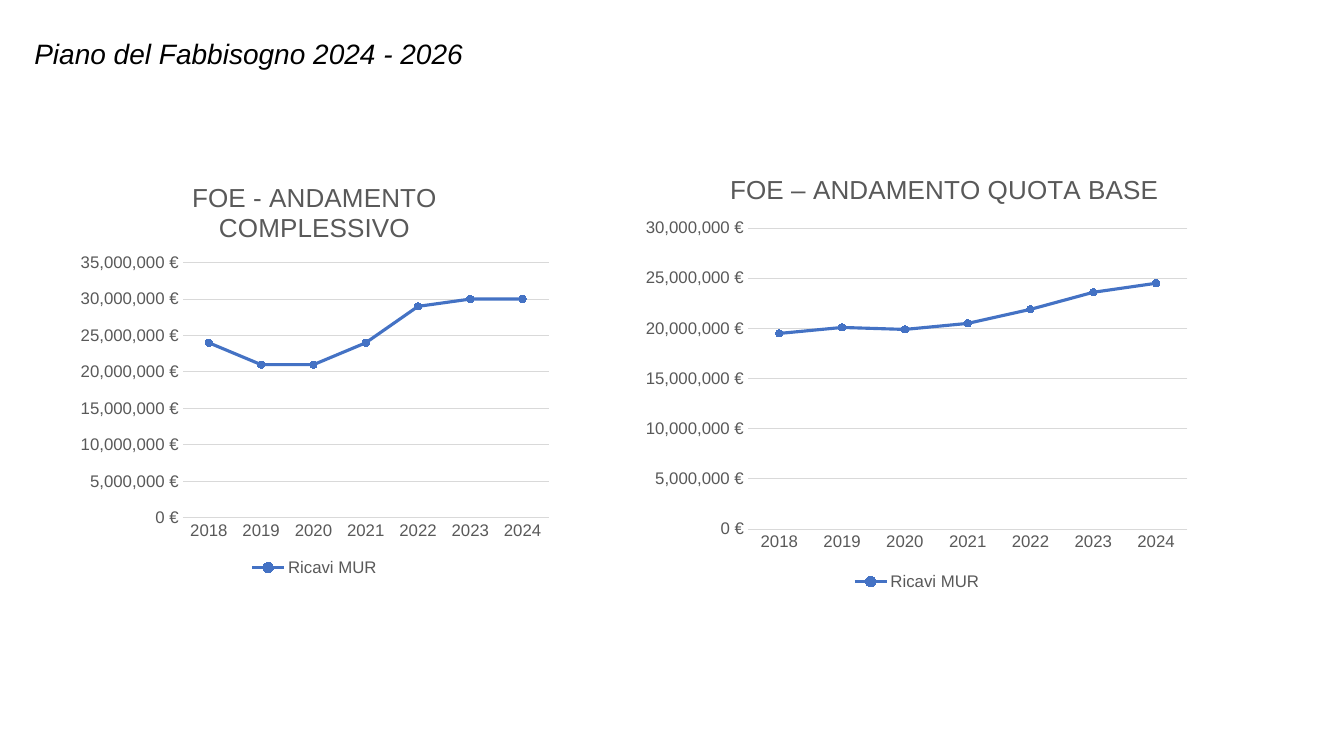
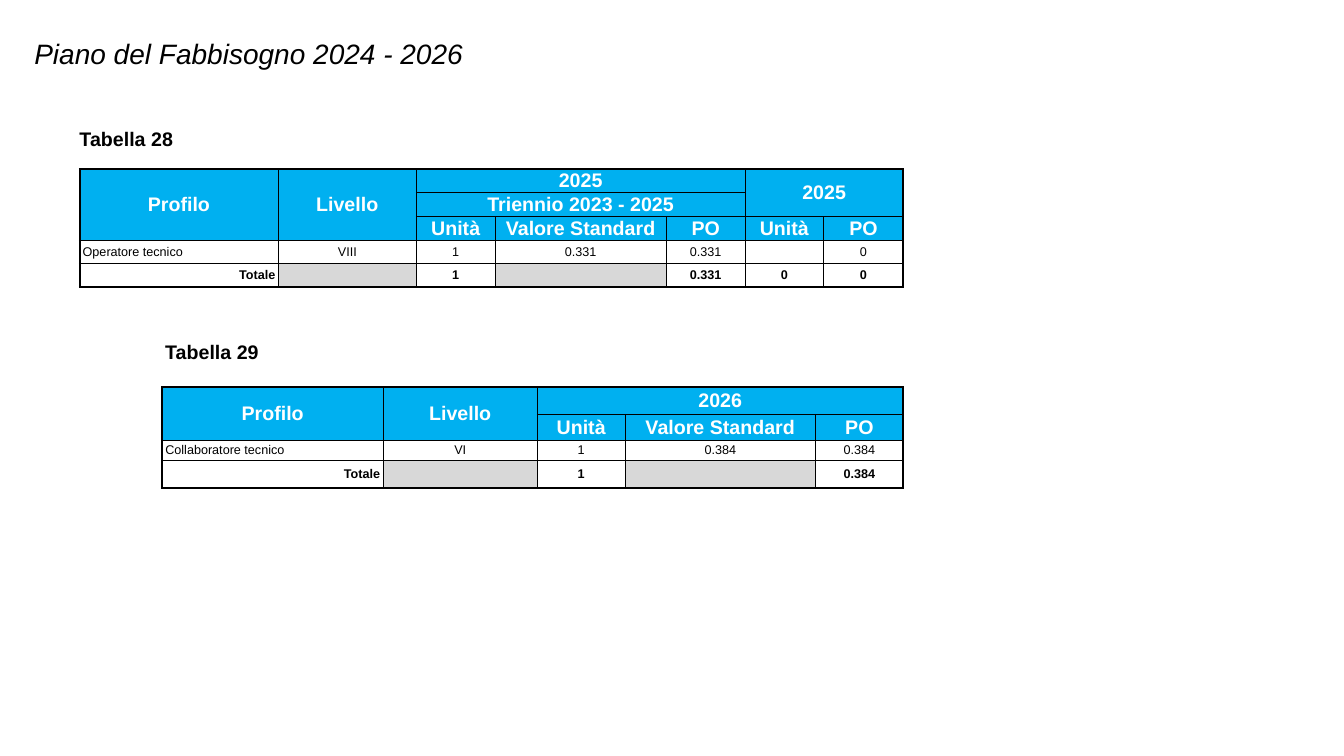
from dataclasses import dataclass

from lxml.etree import SubElement
from pptx import Presentation
from pptx.chart.data import CategoryChartData
from pptx.dml.color import RGBColor
from pptx.enum.chart import XL_CHART_TYPE, XL_LEGEND_POSITION, XL_MARKER_STYLE, XL_TICK_MARK
from pptx.enum.text import MSO_ANCHOR, MSO_AUTO_SIZE, PP_ALIGN
from pptx.oxml import parse_xml
from pptx.oxml.ns import nsdecls, qn
from pptx.util import Inches, Pt


@dataclass(frozen=True)
class Theme:
    font: str = "Arial"
    black: str = "000000"
    white: str = "FFFFFF"
    head: str = "00B0F0"
    blank: str = "D8D8D8"
    gray: str = "595959"
    grid: str = "D9D9D9"
    line: str = "4472C4"
    title: float = 20
    label: float = 14
    cell: float = 9
    chart: float = 18.6
    axis: float = 12
    thin: float = 0.75
    thick: float = 1.5


THEME = Theme()
YEARS = [str(year) for year in range(2018, 2025)]
MILLION = 1_000_000


def color(code):
    return RGBColor.from_string(code)


def style(font, size, code, bold=False, italic=False):
    font.name, font.size = THEME.font, Pt(size)
    font.bold, font.italic = bold, italic
    font.color.rgb = color(code)


def put(frame, text, size, code=THEME.black, align=PP_ALIGN.LEFT, space=None, **kind):
    """Write one formatted paragraph into a text frame."""
    para = frame.paragraphs[0]
    para.alignment = align
    if space:
        para.line_spacing = space
    if text:
        run = para.add_run()
        run.text = text
        style(run.font, size, code, **kind)
    else:
        SubElement(para._p, qn("a:endParaRPr"), sz=str(int(size * 100)))


def place(node, index, **parts):
    """Give a chart part a manual layout, in fractions of the chart."""
    old = node.find(qn("c:layout"))
    if old is not None:
        node.remove(old)
    modes = "".join(f'<c:{key}Mode val="edge"/>' for key in "xy")
    sizes = "".join(f'<c:{key} val="{val}"/>' for key, val in parts.items())
    inner = '<c:layoutTarget val="inner"/>' if "w" in parts else ""
    node.insert(index, parse_xml(
        f'<c:layout {nsdecls("c")}><c:manualLayout>{inner}{modes}{sizes}'
        "</c:manualLayout></c:layout>"))


def edge(cell, side, width):
    line = SubElement(cell._tc.get_or_add_tcPr(), qn(f"a:ln{side}"), w=str(Pt(width)))
    fill = SubElement(line, qn("a:solidFill"))
    SubElement(fill, qn("a:srgbClr"), val=THEME.black)


class Deck:
    def __init__(self):
        self.prs = Presentation()
        self.prs.slide_width, self.prs.slide_height = Inches(13.33), Inches(7.5)
        self.slide = None

    def page(self, title):
        self.slide = self.prs.slides.add_slide(self.prs.slide_layouts[5])
        shape = self.slide.shapes.title
        shape.left, shape.top = Inches(0.24), Inches(0.24)
        shape.width, shape.height = Inches(10.89), Inches(0.62)
        frame = shape.text_frame
        frame.auto_size = MSO_AUTO_SIZE.NONE
        frame.vertical_anchor = MSO_ANCHOR.MIDDLE
        put(frame, title, THEME.title, space=0.9, italic=True)

    def label(self, text, left, top):
        box = self.slide.shapes.add_textbox(
            Inches(left), Inches(top), Inches(6.67), Inches(0.34))
        box.text_frame.word_wrap = True
        put(box.text_frame, text, THEME.label, bold=True)

    def chart(self, title, values, area, top, plot, spot=None):
        """Add a line chart; values and the axis top are in millions."""
        data = CategoryChartData()
        data.categories = YEARS
        data.add_series("Ricavi MUR", [round(val * MILLION) for val in values])
        chart = self.slide.shapes.add_chart(
            XL_CHART_TYPE.LINE_MARKERS, *map(Inches, area), data).chart
        style(chart.font, THEME.axis, THEME.gray)

        chart.has_title = True
        put(chart.chart_title.text_frame, title, THEME.chart, THEME.gray, PP_ALIGN.CENTER)
        if spot:
            place(chart.chart_title._element, 1, **spot)
        chart.has_legend = True
        chart.legend.position = XL_LEGEND_POSITION.BOTTOM
        chart.legend.include_in_layout = False

        years, euros = chart.category_axis, chart.value_axis
        for axis in (years, euros):
            axis.major_tick_mark = axis.minor_tick_mark = XL_TICK_MARK.NONE
        euros.minimum_scale, euros.maximum_scale = 0, top * MILLION
        euros.major_unit = 5 * MILLION
        euros.tick_labels.number_format = '#,##0\\ "€"'
        euros.tick_labels.number_format_is_linked = False
        euros.format.line.fill.background()
        for line in (years.format.line, euros.major_gridlines.format.line):
            line.color.rgb, line.width = color(THEME.grid), Pt(THEME.thin)

        chart.plots[0].vary_by_categories = False
        series = chart.plots[0].series[0]
        series.smooth = False
        series.format.line.color.rgb = color(THEME.line)
        series.format.line.width = Pt(2.25)
        mark = series.marker
        mark.style, mark.size = XL_MARKER_STYLE.CIRCLE, 5
        mark.format.fill.solid()
        mark.format.fill.fore_color.rgb = color(THEME.line)
        mark.format.line.color.rgb = color(THEME.line)
        place(chart._chartSpace.chart.plotArea, 0, **plot)

    def table(self, left, top, widths, heights, rows, heads, spans):
        """Add a table; each span is first row, first column, last row, last column."""
        shape = self.slide.shapes.add_table(
            len(rows), len(widths), Inches(left), Inches(top),
            Inches(sum(widths)), Inches(sum(heights)))
        table = shape.table
        table.first_row = table.horz_banding = False
        for col, width in zip(table.columns, widths):
            col.width = Inches(width)
        for row, height in zip(table.rows, heights):
            row.height = Inches(height)
        for r1, c1, r2, c2 in spans:
            table.cell(r1, c1).merge(table.cell(r2, c2))
        for r, row in enumerate(rows):
            for c, text in enumerate(row):
                self.cell(table, r, c, text, r < heads)

    def cell(self, table, r, c, text, head):
        cell = table.cell(r, c)
        high, wide = len(table.rows), len(table.columns)
        total = r == high - 1
        outer = {"L": c == 0, "R": c + cell.span_width == wide,
                 "T": r == 0, "B": r + cell.span_height == high}
        for side, hit in outer.items():
            edge(cell, side, THEME.thick if hit else THEME.thin)
        cell.fill.solid()
        back = THEME.head if head else THEME.blank if total and not text else THEME.white
        cell.fill.fore_color.rgb = color(back)
        cell.vertical_anchor = MSO_ANCHOR.MIDDLE
        cell.margin_left = cell.margin_right = Inches(0.03)
        cell.margin_top = cell.margin_bottom = 0
        align = PP_ALIGN.CENTER
        if c == 0 and not head:
            align = PP_ALIGN.RIGHT if total else PP_ALIGN.LEFT
        put(cell.text_frame, text, THEME.label if head and text else THEME.cell,
            THEME.white if head else THEME.black, align, bold=head or total)


def main():
    deck = Deck()
    title = "Piano del Fabbisogno 2024 - 2026"

    deck.page(title)
    deck.chart("FOE - ANDAMENTO COMPLESSIVO",
               [24, 21, 21, 24, 29, 30, 30],
               (0.7, 1.61, 4.84, 4.15), 35, dict(x=0.23, y=0.24, w=0.75, h=0.61))
    deck.chart("FOE – ANDAMENTO QUOTA BASE",
               [19.5, 20.1, 19.9, 20.5, 21.9, 23.6, 24.5],
               (6.3, 1.57, 5.59, 4.33), 30, dict(x=0.2, y=0.16, w=0.78, h=0.69),
               dict(x=0.16, y=0.02))

    deck.page(title)
    deck.label("Tabella 28", 0.69, 1.21)
    deck.table(
        0.79, 1.68, [1.97, 1.37, 0.78, 1.7, 0.78, 0.78, 0.79], [1.17 / 5] * 5,
        [["Profilo", "Livello", "2025", "", "", "2025", ""],
         ["", "", "Triennio 2023 - 2025", "", "", "", ""],
         ["", "", "Unità", "Valore Standard", "PO", "Unità", "PO"],
         ["Operatore tecnico", "VIII", "1", "0.331", "0.331", "", "0"],
         ["Totale", "", "1", "", "0.331", "0", "0"]],
        3, [(0, 0, 2, 0), (0, 1, 2, 1), (0, 2, 0, 4), (0, 5, 1, 6), (1, 2, 1, 4)])
    deck.label("Tabella 29", 1.54, 3.32)
    deck.table(
        1.61, 3.84, [2.19, 1.53, 0.87, 1.89, 0.87], [0.27, 0.26, 0.2, 0.27],
        [["Profilo", "Livello", "2026", "", ""],
         ["", "", "Unità", "Valore Standard", "PO"],
         ["Collaboratore tecnico", "VI", "1", "0.384", "0.384"],
         ["Totale", "", "1", "", "0.384"]],
        2, [(0, 0, 1, 0), (0, 1, 1, 1), (0, 2, 0, 4)])

    deck.prs.save("out.pptx")


if __name__ == "__main__":
    main()
